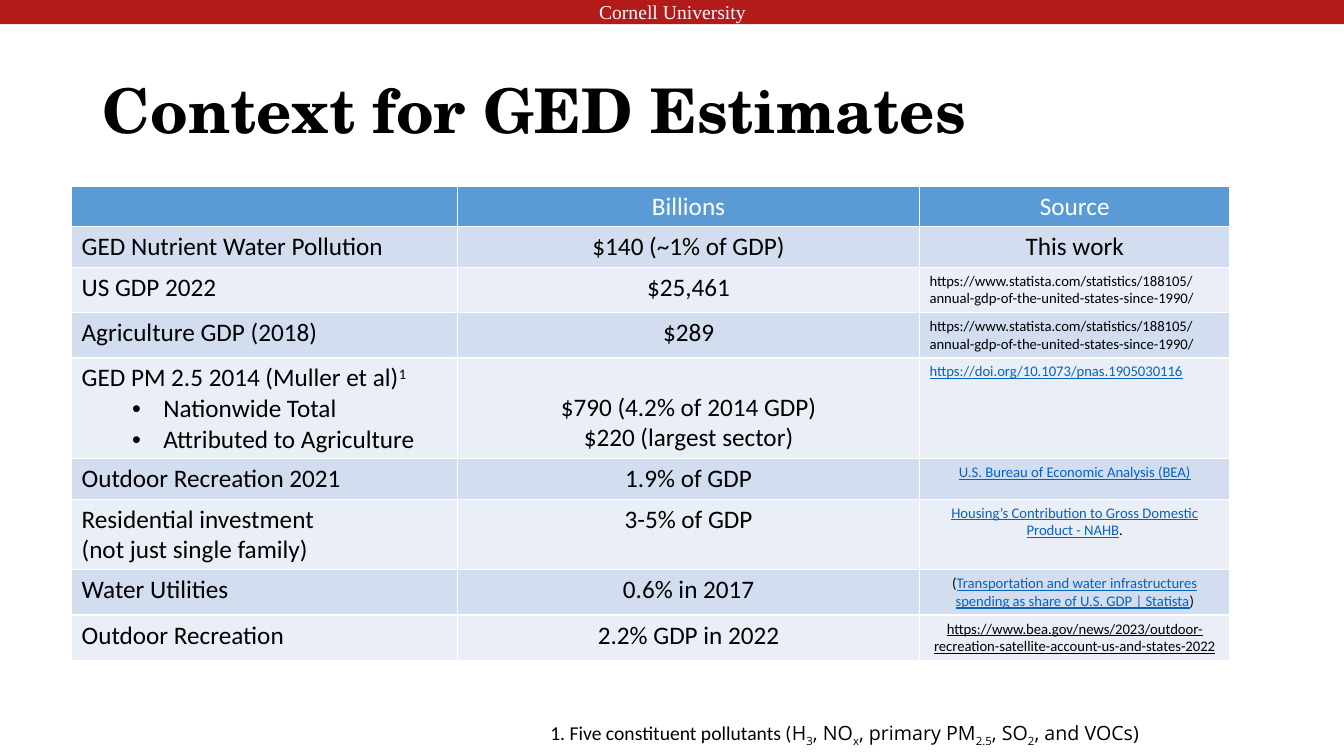
from dataclasses import dataclass

from lxml.etree import SubElement
from pptx import Presentation
from pptx.dml.color import RGBColor
from pptx.enum.shapes import MSO_SHAPE as Shape
from pptx.enum.text import MSO_ANCHOR as Anchor, PP_ALIGN as Align
from pptx.oxml.ns import qn
from pptx.util import Inches, Pt

WHITE = RGBColor(0xFF, 0xFF, 0xFF)
BLACK = RGBColor(0, 0, 0)
RED = RGBColor(0xB3, 0x1B, 0x1B)
BLUE = RGBColor(0x5B, 0x9B, 0xD5)
LINK = RGBColor(0x05, 0x63, 0xC1)
BANDS = (RGBColor(0xD2, 0xDE, 0xEF), RGBColor(0xEA, 0xEF, 0xF7))


@dataclass(frozen=True)
class Run:
    text: str
    size: float = 18
    color: RGBColor = BLACK
    font: str = "Calibri"
    bold: bool = False
    under: bool = False
    base: int = 0


@dataclass(frozen=True)
class Para:
    runs: tuple[Run, ...]
    align: Align = Align.LEFT
    bullet: bool = False


@dataclass(frozen=True)
class Row:
    height: float
    label: tuple[Para, ...]
    value: tuple[Para, ...]
    source: tuple[Para, ...]
    fill: RGBColor


def left(*runs: Run) -> tuple[Para, ...]:
    return (Para(runs),)


def mid(*runs: Run) -> tuple[Para, ...]:
    return (Para(runs, Align.CENTER),)


def item(text: str) -> tuple[Para, ...]:
    return (Para((Run(text),), bullet=True),)


def head(text: str) -> tuple[Para, ...]:
    return mid(Run(text, color=WHITE))


def small(text: str) -> Run:
    return Run(text, 10.5)


def link(text: str) -> Run:
    return Run(text, 10.5, LINK, under=True)


def sans(text: str, base: int = 0) -> Run:
    return Run(text, 14, font="Open Sans", base=base)


GDP = left(small("https://www.statista.com/statistics/188105/annual-gdp-of-the-united-states-since-1990/"))
ROWS = (
    Row(0.4, (), head("Billions"), head("Source"), BLUE),
    Row(0.4, left(Run("GED Nutrient Water Pollution")), mid(Run("$140 (~1% of GDP)")),
        mid(Run("This work")), BANDS[0]),
    Row(0.45, left(Run("US GDP 2022")), mid(Run("$25,461")), GDP, BANDS[1]),
    Row(0.45, left(Run("Agriculture GDP (2018)")), mid(Run("$289")), GDP, BANDS[0]),
    Row(1.0, left(Run("GED PM 2.5 2014 (Muller et al)"), Run("1", base=30))
        + item("Nationwide Total") + item("Attributed to Agriculture"),
        mid(Run("$790 (4.2% of 2014 GDP)")) + mid(Run("$220 (largest sector)")),
        left(link("https://doi.org/10.1073/pnas.1905030116")), BANDS[1]),
    Row(0.4, left(Run("Outdoor Recreation 2021")), mid(Run("1.9% of GDP")),
        mid(link("U.S. Bureau of Economic Analysis (BEA)")), BANDS[0]),
    Row(0.7, left(Run("Residential investment")) + left(Run("(not just single family)")),
        mid(Run("3-5% of GDP")),
        mid(link("Housing’s Contribution to Gross Domestic Product - NAHB"), small(".")), BANDS[1]),
    Row(0.45, left(Run("Water Utilities")), mid(Run("0.6% in 2017")),
        mid(small("("),
            link("Transportation and water infrastructures spending as share of U.S. GDP | Statista"),
            small(")")), BANDS[0]),
    Row(0.45, left(Run("Outdoor Recreation")), mid(Run("2.2% GDP in 2022")),
        mid(Run("https://www.bea.gov/news/2023/outdoor-recreation-satellite-account-us-and-states-2022",
                10.5, under=True)), BANDS[1]),
)
WIDTHS = (3.83, 4.58, 3.08)
TALL = 4
NOTE = left(
    Run("1. Five constituent pollutants (", 14), sans("H"), sans("3", -25),
    sans(", NO"), sans("x", -25), sans(", primary PM"), sans("2.5", -25),
    sans(", SO"), sans("2", -25), sans(", and VOCs)"))


def write(frame, paras: tuple[Para, ...]) -> None:
    for i, para in enumerate(paras):
        p = frame.add_paragraph() if i else frame.paragraphs[0]
        p.alignment = para.align
        if para.bullet:
            p.level = 1
            props = p._p.get_or_add_pPr()
            props.set("marL", str(Inches(0.81)))
            props.set("indent", str(Inches(-0.31)))
            SubElement(props, qn("a:buFont")).set("typeface", "Arial")
            SubElement(props, qn("a:buChar")).set("char", "•")
        for run in para.runs:
            r = p.add_run()
            r.text = run.text
            font = r.font
            font.name, font.size = run.font, Pt(run.size)
            font.bold, font.underline = run.bold, run.under
            font.color.rgb = run.color
            if run.base:
                r._r.get_or_add_rPr().set("baseline", str(run.base * 1000))


def label(slide, box: tuple[float, ...], paras: tuple[Para, ...]):
    frame = slide.shapes.add_textbox(*map(Inches, box)).text_frame
    frame.word_wrap = True
    write(frame, paras)
    return frame


def banner(slide) -> None:
    bar = slide.shapes.add_shape(Shape.RECTANGLE, 0, 0, Inches(13.33), Inches(0.24))
    bar.shadow.inherit = False
    bar.fill.solid()
    bar.fill.fore_color.rgb = RED
    bar.line.fill.background()
    label(slide, (5.28, -0.05, 2.78, 0.34),
          mid(Run("Cornell University", 14, WHITE, "Times New Roman")))


def grid(slide) -> None:
    high = sum(row.height for row in ROWS)
    table = slide.shapes.add_table(
        len(ROWS), len(WIDTHS), Inches(0.71), Inches(1.85),
        Inches(sum(WIDTHS)), Inches(high)).table
    for col, width in zip(table.columns, WIDTHS):
        col.width = Inches(width)
    for i, row in enumerate(ROWS):
        table.rows[i].height = Inches(row.height)
        for j, paras in enumerate((row.label, row.value, row.source)):
            cell = table.cell(i, j)
            cell.fill.solid()
            cell.fill.fore_color.rgb = row.fill
            write(cell.text_frame, paras)
    table.cell(TALL, 1).vertical_anchor = Anchor.BOTTOM


def main() -> None:
    deck = Presentation()
    deck.slide_width, deck.slide_height = Inches(13.33), Inches(7.5)
    slide = deck.slides.add_slide(deck.slide_layouts[6])
    banner(slide)
    title = label(slide, (0.92, 0.4, 11.5, 1.45),
                  left(Run("Context for GED Estimates", 44, font="TeX Gyre Schola", bold=True)))
    title.vertical_anchor = Anchor.MIDDLE
    title.paragraphs[0].line_spacing = 0.9
    grid(slide)
    label(slide, (5.36, 7.1, 6.14, 0.34), NOTE)
    deck.save("out.pptx")


if __name__ == "__main__":
    main()
